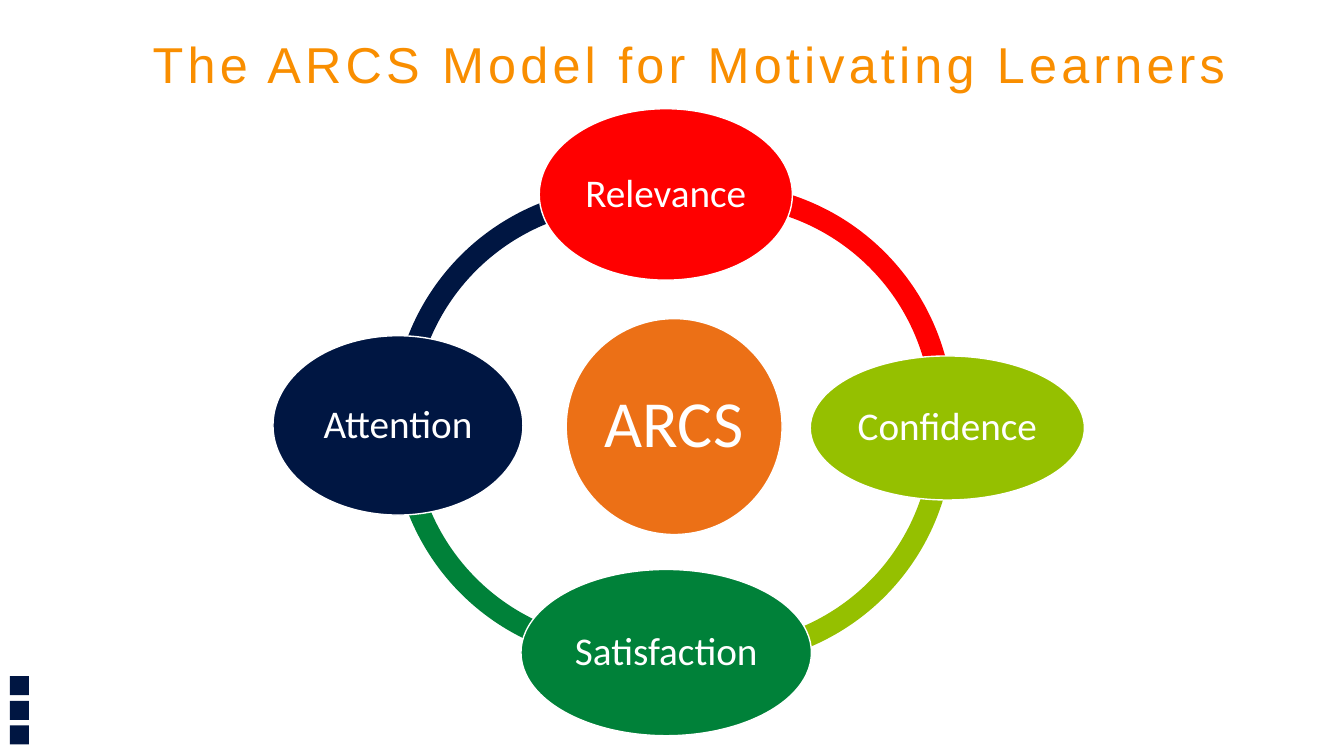
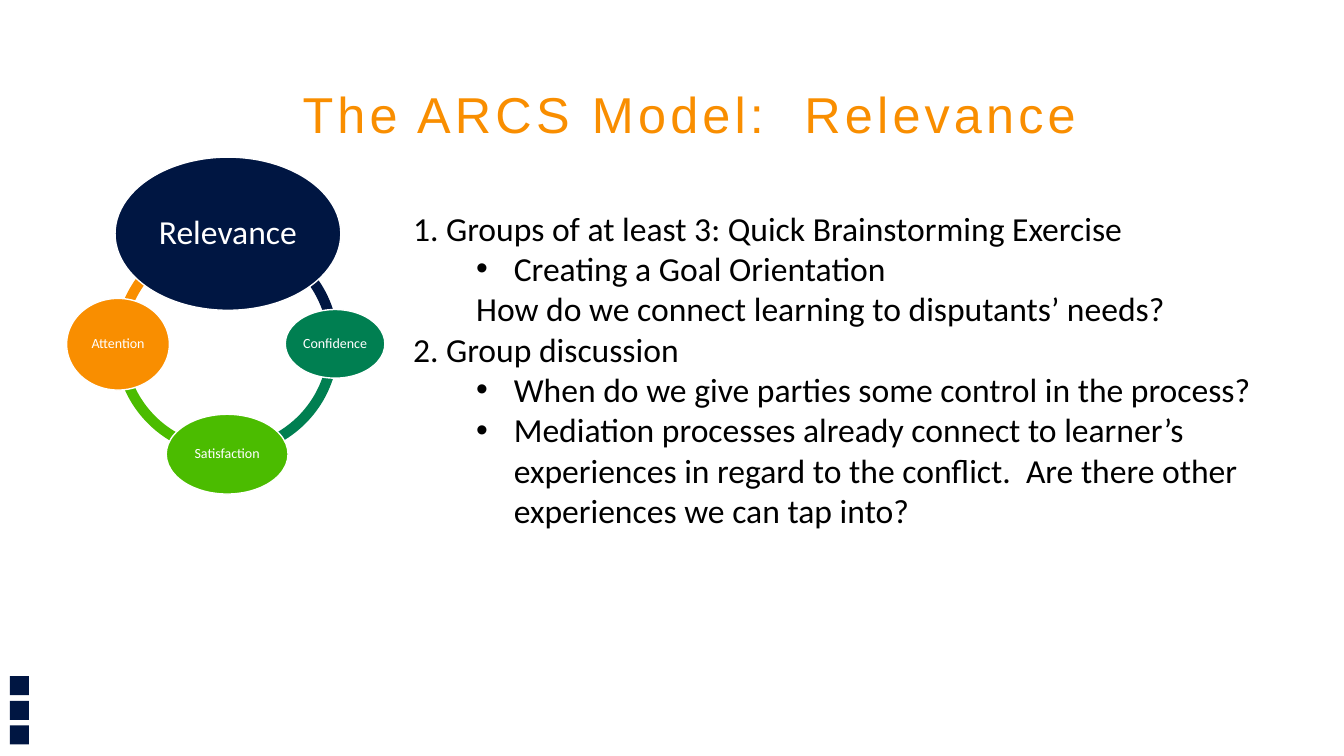
from lxml import etree
from pptx import Presentation
from pptx.dml.color import RGBColor
from pptx.enum.shapes import MSO_SHAPE
from pptx.enum.text import MSO_ANCHOR, PP_ALIGN
from pptx.oxml.ns import qn
from pptx.util import Cm, Pt

OVAL, ARC, SQUARE = MSO_SHAPE.OVAL, MSO_SHAPE.BLOCK_ARC, MSO_SHAPE.RECTANGLE
CENTER, LEFT = PP_ALIGN.CENTER, PP_ALIGN.LEFT
MIDDLE = MSO_ANCHOR.MIDDLE

COLORS = {
    "navy": "001642", "red": "FF0000", "lime": "95C000", "green": "008139",
    "hub": "EC7016", "orange": "F98E00", "leaf": "4BBC00", "teal": "007F51",
    "white": "FFFFFF", "black": "000000",
}

# Content; lengths in cm, angles in degrees.
# Step: label, text size, color, oval box, (arc left, arc top, start, end)
OVERVIEW = {
    "title": "The ARCS Model for Motivating Learners",
    "title_top": 0.71,
    "arc_size": 11.84,
    "steps": [
        ("Relevance", 28, "red", (13.59, 2.74, 6.38, 4.32), (12.19, 4.62, 256.7, 2.59)),
        ("Confidence", 28, "lime", (20.42, 8.97, 6.91, 3.63), (12.19, 4.93, 359.53, 103.25)),
        ("Satisfaction", 28, "green", (13.13, 14.35, 7.32, 4.19), (9.88, 4.85, 80.24, 180.57)),
        ("Attention", 28, "navy", (6.88, 8.46, 6.3, 4.52), (9.88, 4.7, 178.91, 279.77)),
    ],
}
HUB = ("ARCS", 47, "hub", (14.27, 8.03, 5.44, 5.44))
RELEVANCE = {
    "title": "The ARCS Model:  Relevance",
    "title_top": 1.98,
    "arc_size": 5.66,
    "steps": [
        ("Relevance", 24, "navy", (2.9, 3.96, 5.69, 3.86), (2.87, 5.84, 270.79, 0)),
        ("Confidence", 10, "teal", (7.19, 7.8, 2.51, 1.73), (2.87, 5.84, 0, 89.21)),
        ("Satisfaction", 10, "leaf", (4.19, 10.44, 3.07, 2.01), (2.9, 5.84, 90, 180)),
        ("Attention", 10, "orange", (1.68, 7.52, 2.59, 2.31), (2.9, 5.84, 180, 270)),
    ],
}
# Line of the exercise: text, left margin, first-line indent, bullet
EXERCISE = [
    ("1. Groups of at least 3: Quick Brainstorming Exercise", 0, 0, None),
    ("Creating a Goal Orientation", 2.54, -0.95, "•"),
    ("How do we connect learning to disputants’ needs?", 1.59, 0, None),
    ("2. Group discussion", 1.59, -1.59, None),
    ("When do we give parties some control in the process?", 2.54, -0.95, "•"),
    ("Mediation processes already connect to learner’s experiences in regard to "
     "the conflict.  Are there other experiences we can tap into?", 2.54, -0.95, "•"),
]
EXERCISE_BOX = (10.16, 5.11, 22.07, 9.5)

ARC_THICKNESS = 0.046
DEGREE = 0.6  # one degree in units of a shape adjustment
MARKER_COUNT, MARKER_LEFT, MARKER_TOP = 3, 0.25, 17.04
MARKER_SIZE, MARKER_PITCH = 0.48, 0.62


def rgb(color):
    return RGBColor.from_string(COLORS[color])


def write(frame, text, size=24, font="Calibri", color="black", align=LEFT,
          line_spacing=None, tracking=0, margin=0, indent=0, bullet=None):
    """Fill the first paragraph of a frame, or append one when it is taken."""
    first = frame.paragraphs[0]
    paragraph = frame.add_paragraph() if first.runs else first
    paragraph.alignment = align
    paragraph.line_spacing = line_spacing
    run = paragraph.add_run()
    run.text = text
    run.font.size, run.font.name = Pt(size), font
    run.font.color.rgb = rgb(color)
    if tracking:
        run.font._element.set("spc", str(tracking * 100))
    properties = paragraph._p.get_or_add_pPr()
    properties.set("marL", str(Cm(margin)))
    properties.set("indent", str(Cm(indent)))
    if bullet:
        etree.SubElement(properties, qn("a:buFont")).set("typeface", "Arial")
        etree.SubElement(properties, qn("a:buChar")).set("char", bullet)


def add_filled(slide, kind, box, color, outline=None):
    shape = slide.shapes.add_shape(kind, *map(Cm, box))
    shape.shadow.inherit = False
    shape.fill.solid()
    shape.fill.fore_color.rgb = rgb(color)
    if outline:
        shape.line.color.rgb = rgb(outline)
        shape.line.width = Pt(1)
    else:
        shape.line.fill.background()
    return shape


def add_text_frame(slide, box):
    frame = slide.shapes.add_textbox(*map(Cm, box)).text_frame
    frame.word_wrap = True
    return frame


def add_oval(slide, label, size, color, box):
    frame = add_filled(slide, OVAL, box, color, outline="white").text_frame
    frame.margin_left = frame.margin_right = frame.margin_top = frame.margin_bottom = 0
    frame.vertical_anchor = MIDDLE
    frame.word_wrap = False
    write(frame, label, size=size, color="white", align=CENTER, line_spacing=0.9)


def add_cycle(slide, steps, arc_size):
    # Arcs lie behind all the ovals
    for _, _, color, _, (left, top, start, end) in steps:
        arc = add_filled(slide, ARC, (left, top, arc_size, arc_size), color)
        for i, value in enumerate((start * DEGREE, end * DEGREE, ARC_THICKNESS)):
            arc.adjustments[i] = value
    for label, size, color, box, _ in steps:
        add_oval(slide, label, size, color, box)


def add_model_slide(deck, model):
    """Title, corner markers and cycle, as on every slide."""
    slide = deck.slides.add_slide(deck.slide_layouts[6])
    title = add_text_frame(slide, (1.27, model["title_top"], 32.23, 1.8))
    write(title, model["title"], size=36, font="Arial", color="orange",
          align=CENTER, tracking=3)
    for i in range(MARKER_COUNT):
        top = MARKER_TOP + i * MARKER_PITCH
        add_filled(slide, SQUARE, (MARKER_LEFT, top, MARKER_SIZE, MARKER_SIZE), "navy")
    add_cycle(slide, model["steps"], model["arc_size"])
    return slide


def main():
    deck = Presentation()
    deck.slide_width, deck.slide_height = Cm(33.87), Cm(19.05)

    # Overview of the model
    overview = add_model_slide(deck, OVERVIEW)
    add_oval(overview, *HUB)

    # Relevance with its exercise
    relevance = add_model_slide(deck, RELEVANCE)
    exercise = add_text_frame(relevance, EXERCISE_BOX)
    for text, margin, indent, bullet in EXERCISE:
        write(exercise, text, margin=margin, indent=indent, bullet=bullet)

    deck.save("out.pptx")


if __name__ == "__main__":
    main()
